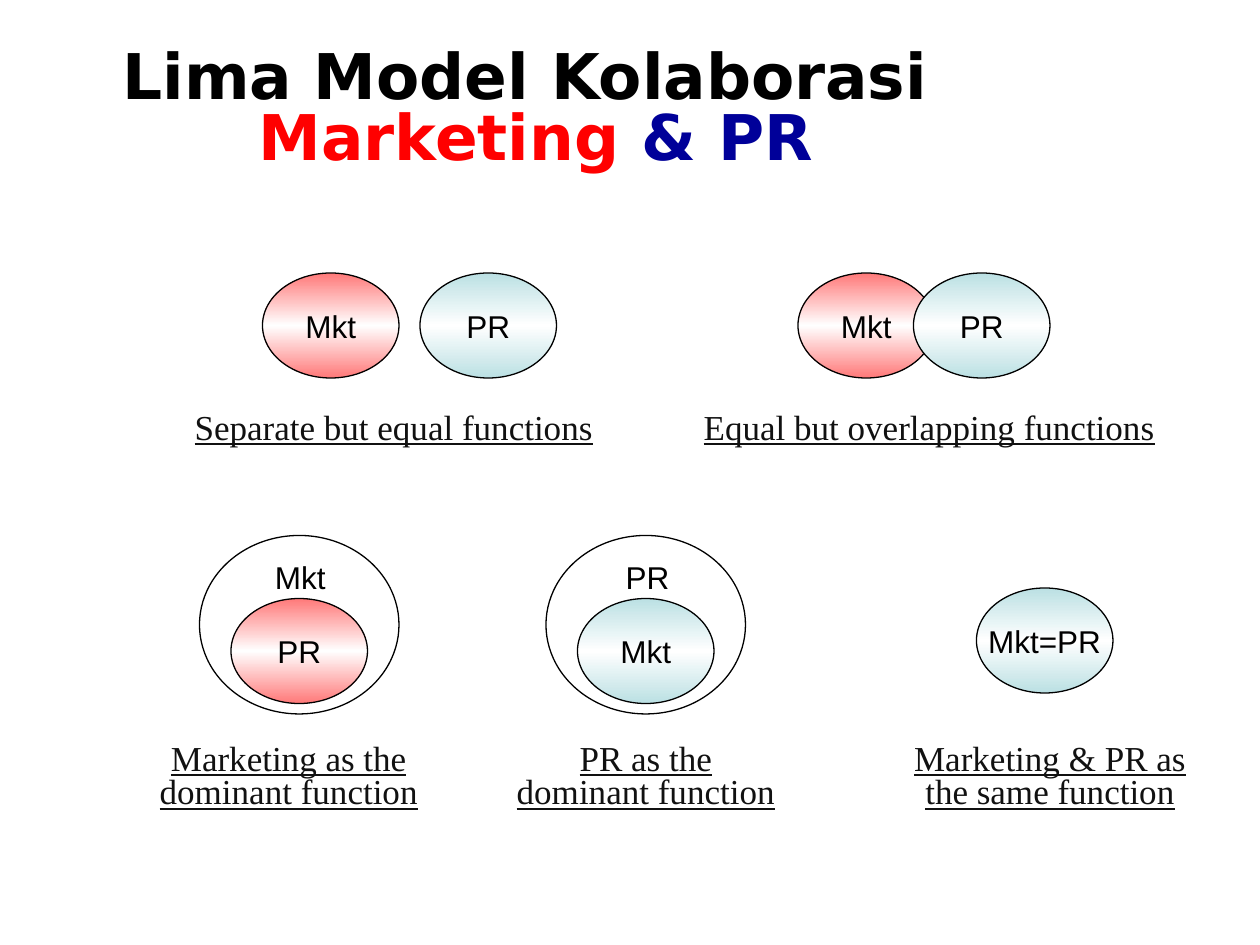
import copy

import pptx
import pptx.dml.color
import pptx.enum.shapes
import pptx.enum.text
import pptx.oxml.ns
import pptx.util

RGBColor = pptx.dml.color.RGBColor
BLACK = RGBColor(0x00, 0x00, 0x00)
WHITE = RGBColor(0xFF, 0xFF, 0xFF)
CAPTION_GREY = RGBColor(0x11, 0x11, 0x11)
RED = RGBColor(0xFF, 0x00, 0x00)
NAVY = RGBColor(0x00, 0x00, 0x99)
ROSE = RGBColor(0xFF, 0x79, 0x79)
TEAL = RGBColor(0xBB, 0xE0, 0xE3)

# The slide is a grid of 120 columns and 90 rows, twelve to the inch
CELL = pptx.util.Inches(1) // 12
SMALL_OVAL = (13, 10)
LARGE_OVAL = (19, 17)

TITLE_FONT = {"name": "DejaVu Sans", "size": pptx.util.Pt(36), "bold": True}
CAPTION_FONT = {"name": "Times New Roman", "size": pptx.util.Pt(20), "underline": True}
OVAL_FONT = {"name": "Arial", "size": pptx.util.Pt(18)}

CENTER = pptx.enum.text.PP_ALIGN.CENTER
LEFT = pptx.enum.text.PP_ALIGN.LEFT
MIDDLE = pptx.enum.text.MSO_ANCHOR.MIDDLE
BOTTOM = pptx.enum.text.MSO_ANCHOR.BOTTOM
GROW = pptx.enum.text.MSO_AUTO_SIZE.SHAPE_TO_FIT_TEXT
FIXED = pptx.enum.text.MSO_AUTO_SIZE.NONE


def grid(*cells):
    return [round(cell * CELL) for cell in cells]


def set_attributes(target, values):
    for name, value in values.items():
        setattr(target, name, value)


def add_run(paragraph, text, font, color):
    run = paragraph.add_run()
    run.text = text
    set_attributes(run.font, font)
    run.font.color.rgb = color


def fill_banded(shape, color):
    """Fill with a vertical gradient: color, white, color."""
    shape.fill.gradient()
    shape.fill.gradient_angle = 90
    stop_list = shape._element.spPr.find(".//" + pptx.oxml.ns.qn("a:gsLst"))
    stop_list.append(copy.deepcopy(stop_list[-1]))
    bands = ((0, color), (0.5, WHITE), (1, color))
    for stop, (position, band_color) in zip(shape.fill.gradient_stops, bands):
        stop.position = position
        stop.color.rgb = band_color


def add_oval(slide, column, row, size, color=None, text=None):
    shape = slide.shapes.add_shape(
        pptx.enum.shapes.MSO_SHAPE.OVAL, *grid(column, row, *size))
    shape.shadow.inherit = False
    shape.line.color.rgb = BLACK
    shape.line.width = pptx.util.Pt(0.75)
    if color is None:
        shape.fill.background()
    else:
        fill_banded(shape, color)
    if text:
        set_attributes(shape.text_frame, {"word_wrap": False, "vertical_anchor": MIDDLE})
        paragraph = shape.text_frame.paragraphs[0]
        paragraph.alignment = CENTER
        add_run(paragraph, text, OVAL_FONT, BLACK)


def add_text(slide, box, text, font, color, spacing, alignment=CENTER, wrap=True):
    shape = slide.shapes.add_textbox(*grid(*box))
    set_attributes(shape.text_frame, {"word_wrap": wrap, "auto_size": GROW})
    paragraph = shape.text_frame.paragraphs[0]
    set_attributes(paragraph, {"alignment": alignment, "line_spacing": spacing})
    add_run(paragraph, text, font, color)


def add_title(slide, box, lines):
    title = slide.shapes.title
    set_attributes(title, dict(zip(("left", "top", "width", "height"), grid(*box))))
    frame = title.text_frame
    set_attributes(frame, {"word_wrap": True, "auto_size": FIXED, "vertical_anchor": BOTTOM})
    for index, runs in enumerate(lines):
        paragraph = frame.add_paragraph() if index else frame.paragraphs[0]
        set_attributes(paragraph, {"alignment": CENTER, "line_spacing": 0.8,
                                   "space_before": pptx.util.Pt(0)})
        for text, color in runs:
            add_run(paragraph, text, TITLE_FONT, color)


def main():
    presentation = pptx.Presentation()
    presentation.slide_width, presentation.slide_height = grid(120, 90)
    slide = presentation.slides.add_slide(presentation.slide_layouts[5])

    add_title(slide, (8, 5, 84, 12), [
        [("Lima Model Kolaborasi", BLACK)],
        [(" Marketing", RED), (" & PR", NAVY)],
    ])

    # Top row: two equal functions, apart and overlapping
    for market_column, relations_column in ((25, 40), (76, 87)):
        add_oval(slide, market_column, 26, SMALL_OVAL, ROSE, "Mkt")
        add_oval(slide, relations_column, 26, SMALL_OVAL, TEAL, "PR")

    # Bottom row: one function inside the other
    for column, color, outer, inner, indent, width in (
            (19, ROSE, "Mkt", "PR", 6, 7.2),
            (52, TEAL, "PR", "Mkt", 6.4, 6.6)):
        add_oval(slide, column, 51, LARGE_OVAL)
        add_oval(slide, column + 3, 57, SMALL_OVAL, color, inner)
        add_text(slide, (column + indent, 53, width, 4.4), outer,
                 OVAL_FONT, BLACK, 0.9, LEFT, wrap=False)

    # Bottom row: both as one function
    add_oval(slide, 93, 56, SMALL_OVAL, TEAL, "Mkt=PR")

    # Captions: left, top, width, height, line spacing, text
    for *box, spacing, text in (
            (15, 38, 45, 5.2, 1.0, "Separate but equal functions"),
            (65, 38, 47, 5.2, 1.0, "Equal but overlapping functions"),
            (12, 70.3, 31, 7.7, 0.8, "Marketing as the dominant function"),
            (48, 70.3, 27, 7.7, 0.8, "PR as the dominant function"),
            (85, 70.3, 30, 7.7, 0.8, "Marketing & PR as the same function")):
        add_text(slide, box, text, CAPTION_FONT, CAPTION_GREY, spacing)

    presentation.save("out.pptx")


if __name__ == "__main__":
    main()
